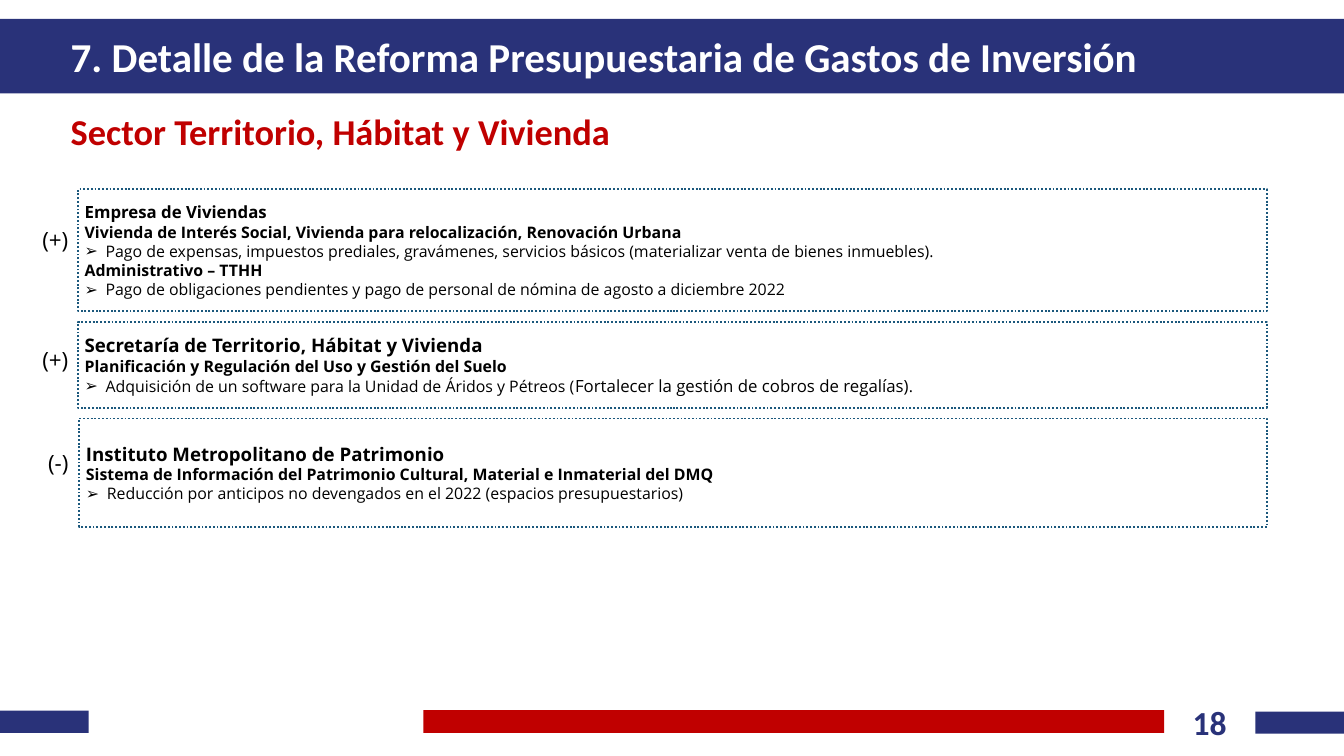
from lxml import etree
from pptx import Presentation
from pptx.dml.color import RGBColor
from pptx.enum.dml import MSO_LINE
from pptx.enum.shapes import MSO_SHAPE
from pptx.enum.text import MSO_ANCHOR, MSO_AUTO_SIZE, PP_ALIGN
from pptx.oxml.ns import qn
from pptx.util import Cm, Pt

RECT = MSO_SHAPE.RECTANGLE
DOTTED = MSO_LINE.ROUND_DOT
MIDDLE = MSO_ANCHOR.MIDDLE
NO_FIT, GROW = MSO_AUTO_SIZE.NONE, MSO_AUTO_SIZE.SHAPE_TO_FIT_TEXT
LEFT, CENTER, JUSTIFY = PP_ALIGN.LEFT, PP_ALIGN.CENTER, PP_ALIGN.JUSTIFY
NAVY, RED, BLUE, BLACK, WHITE = "293279", "C00000", "1B587C", "000000", "FFFFFF"


def color(value):
    return RGBColor.from_string(value)


def style(r, size, font, value, bold):
    r.font.size = Pt(size)
    r.font.name = font
    r.font.color.rgb = color(value)
    r.font.bold = bold


prs = Presentation()
prs.slide_width, prs.slide_height = Cm(50.8), Cm(28.58)
s = prs.slides.add_slide(prs.slide_layouts[5])

bands = [
    (16, 26.85, 28, 0.86, RED),
    (0, 26.87, 3.35, 0.84, NAVY),
    (47.45, 26.9, 3.35, 0.84, NAVY),
    (0, 0.71, 50.8, 2.82, NAVY),
]
for left, top, width, height, fill in bands:
    sp = s.shapes.add_shape(RECT, Cm(left), Cm(top), Cm(width), Cm(height))
    sp.shadow.inherit = False
    sp.fill.solid()
    sp.fill.fore_color.rgb = color(fill)
    sp.line.fill.background()

title = s.shapes.title
s.shapes._spTree.append(title._element)
title.left, title.top, title.width, title.height = Cm(2.21), Cm(0.71), Cm(45.11), Cm(2.82)
title.text_frame.text = "7. Detalle de la Reforma Presupuestaria de Gastos de Inversión"
subtitle = s.shapes.add_textbox(Cm(2.21), Cm(3.53), Cm(23.55), Cm(2.87))
subtitle.text_frame.text = "Sector Territorio, Hábitat y Vivienda"
for sp, size, value in [(title, 44, WHITE), (subtitle, 39, RED)]:
    tf = sp.text_frame
    tf.word_wrap = True
    tf.auto_size = NO_FIT
    tf.vertical_anchor = MIDDLE
    tf.margin_left = tf.margin_right = Cm(0.46)
    tf.margin_top = tf.margin_bottom = Cm(0.23)
    tf.paragraphs[0].alignment = LEFT
    style(tf.paragraphs[0].runs[0], size, "Calibri", value, True)

page = s.shapes.add_textbox(Cm(44), Cm(26.42), Cm(3.45), Cm(1.8))
tf = page.text_frame
tf.word_wrap = True
tf.auto_size = GROW
tf.text = "18"
tf.paragraphs[0].alignment = CENTER
style(tf.paragraphs[0].runs[0], 36, "Calibri", NAVY, True)

entities = [
    (2.95, 7.16, 44.93, 4.6, "(+)", 1.35, 8.43, [
        (False, [("Empresa de Viviendas", 18)]),
        (False, [("Vivienda de Interés Social, Vivienda para relocalización, Renovación Urbana", 17)]),
        (True, [("Pago de expensas, impuestos prediales, gravámenes, servicios básicos "
                 "(materializar venta de bienes inmuebles).", 17)]),
        (False, [("Administrativo – TTHH", 17)]),
        (True, [("Pago de obligaciones pendientes y pago de personal de nómina "
                 "de agosto a diciembre 2022", 17)]),
    ]),
    (2.95, 12.17, 44.93, 3.25, "(+)", 1.35, 12.95, [
        (False, [("Secretaría de Territorio, Hábitat y Vivienda", 20)]),
        (False, [("Planificación y Regulación del Uso y Gestión del Suelo", 17)]),
        (True, [("Adquisición de un software para la Unidad de Áridos y Pétreos (", 17),
                ("Fortalecer la gestión de cobros de regalías)", 18), (".", 17)]),
    ]),
    (3, 15.82, 44.88, 4.11, "(-)", 1.57, 16.84, [
        (False, [("Instituto Metropolitano de Patrimonio", 20)]),
        (False, [("Sistema de Información del Patrimonio Cultural, Material e Inmaterial del DMQ", 17)]),
        (True, [("Reducción por anticipos no devengados en el 2022 (espacios presupuestarios)", 17)]),
    ]),
]
for left, top, width, height, sign, sign_left, sign_top, lines in entities:
    box = s.shapes.add_shape(RECT, Cm(left), Cm(top), Cm(width), Cm(height))
    box.shadow.inherit = False
    box.fill.background()
    box.line.color.rgb = color(BLUE)
    box.line.width = Pt(2)
    box.line.dash_style = DOTTED
    tf = box.text_frame
    tf.word_wrap = True
    tf.vertical_anchor = MIDDLE
    for i, (bulleted, runs) in enumerate(lines):
        p = tf.paragraphs[0] if i == 0 else tf.add_paragraph()
        p.alignment = JUSTIFY
        if bulleted:
            pPr = p._p.get_or_add_pPr()
            pPr.set("marL", str(Cm(0.79)))
            pPr.set("indent", str(-Cm(0.79)))
            etree.SubElement(pPr, qn("a:buFont")).set("typeface", "Open Sans")
            etree.SubElement(pPr, qn("a:buChar")).set("char", "➢")
        for text, size in runs:
            r = p.add_run()
            r.text = text
            style(r, size, "Open Sans", BLACK, not bulleted)

    mark = s.shapes.add_textbox(Cm(sign_left), Cm(sign_top), Cm(2.93 - sign_left), Cm(1.27))
    tf = mark.text_frame
    tf.word_wrap = False
    tf.auto_size = GROW
    tf.text = sign
    style(tf.paragraphs[0].runs[0], 24, "Open Sans", BLACK, False)

prs.save("out.pptx")
